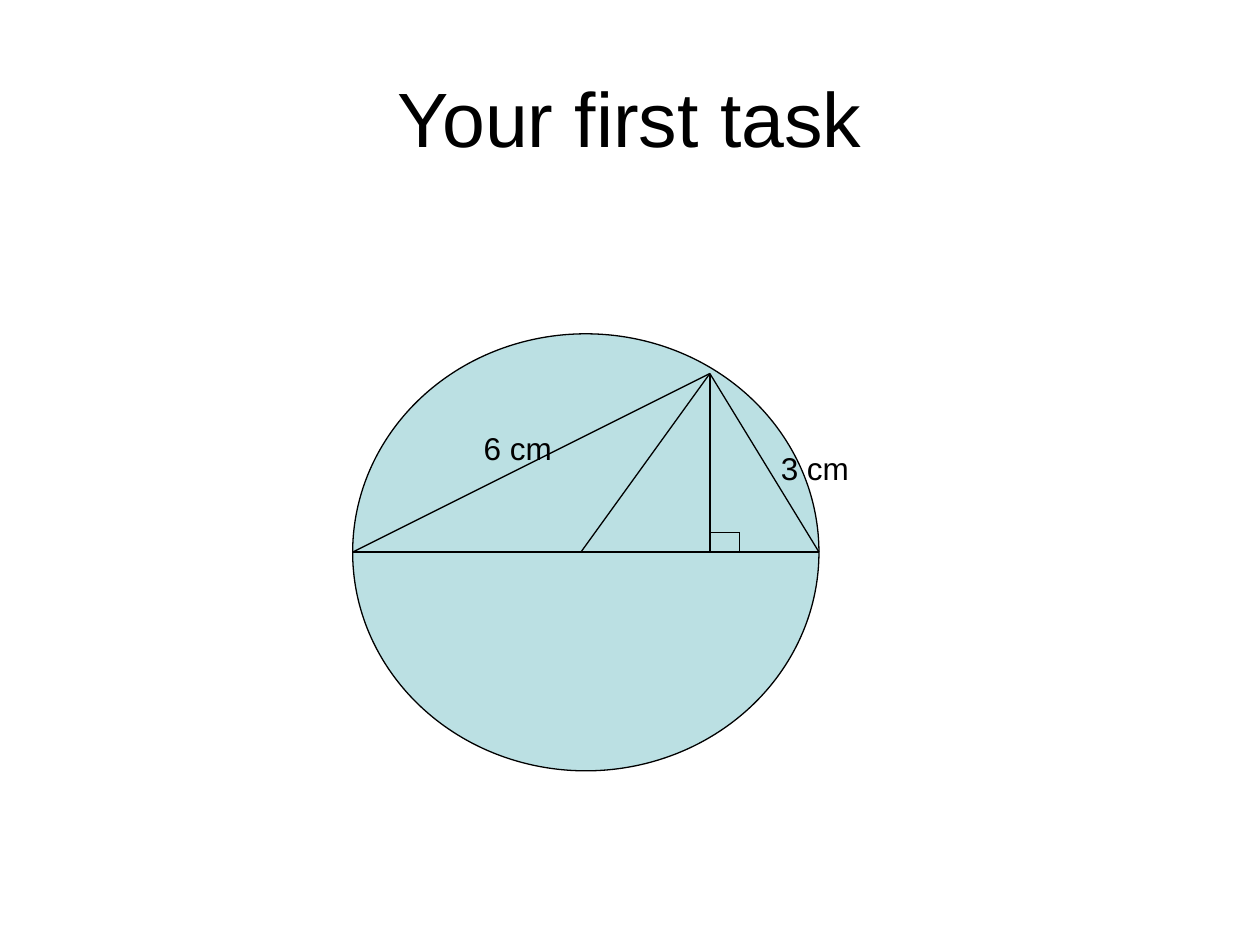
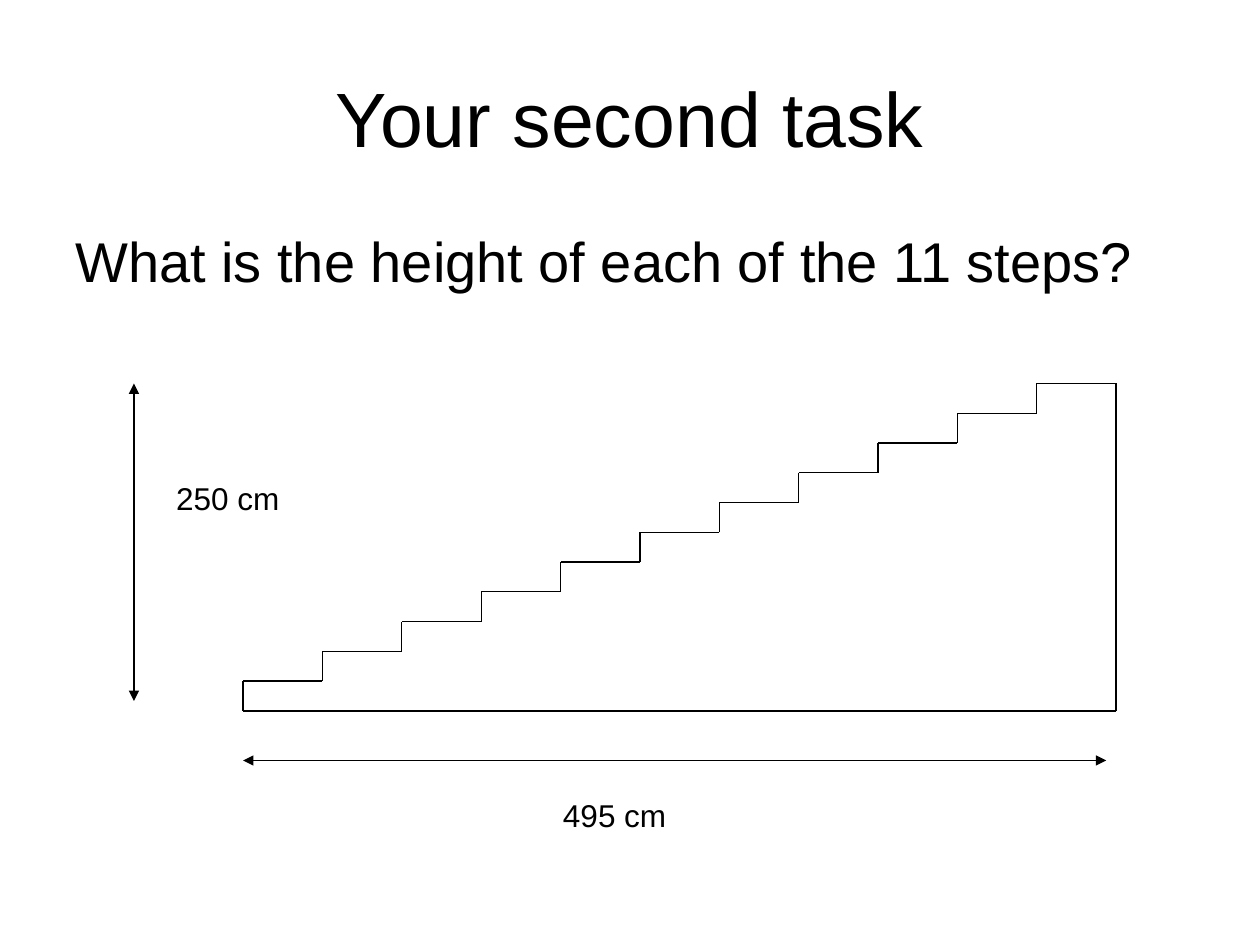
from dataclasses import dataclass
from itertools import pairwise
from typing import NamedTuple

from lxml.etree import SubElement
from pptx import Presentation
from pptx.dml.color import RGBColor
from pptx.enum.shapes import MSO_CONNECTOR, MSO_SHAPE
from pptx.enum.text import MSO_ANCHOR, PP_ALIGN
from pptx.oxml.ns import qn
from pptx.slide import Slide
from pptx.text.text import TextFrame
from pptx.util import Cm, Pt


@dataclass(frozen=True)
class Theme:
    font: str = "Arial"
    ink: RGBColor = RGBColor(0x00, 0x00, 0x00)
    circle: RGBColor = RGBColor(0xBB, 0xE0, 0xE3)
    title_size: int = 44
    question_size: int = 32
    label_size: int = 18
    line_width: float = 0.75


THEME = Theme()
TITLE_ONLY_LAYOUT = 5


class Point(NamedTuple):
    """A place on the slide, in centimetres."""
    x: float
    y: float


@dataclass(frozen=True)
class TextItem:
    """A text box, in centimetres."""
    text: str
    left: float
    top: float
    width: float
    height: float = 1.02
    size: int = THEME.label_size
    space_before: float = 0


# Shared drawing functions
def format_text(text_frame: TextFrame, size: int) -> None:
    for paragraph in text_frame.paragraphs:
        for run in paragraph.runs:
            run.font.name = THEME.font
            run.font.size = Pt(size)
            run.font.color.rgb = THEME.ink


def add_titled_slide(presentation, title: str) -> Slide:
    slide = presentation.slides.add_slide(presentation.slide_layouts[TITLE_ONLY_LAYOUT])
    shape = slide.shapes.title
    shape.left, shape.top, shape.width, shape.height = Cm(1.27), Cm(0.76), Cm(22.86), Cm(3.18)
    text_frame = shape.text_frame
    text_frame.text = title
    text_frame.vertical_anchor = MSO_ANCHOR.MIDDLE
    text_frame.paragraphs[0].alignment = PP_ALIGN.CENTER
    format_text(text_frame, THEME.title_size)
    return slide


def add_text(slide: Slide, item: TextItem) -> None:
    shape = slide.shapes.add_textbox(
        Cm(item.left), Cm(item.top), Cm(item.width), Cm(item.height))
    text_frame = shape.text_frame
    text_frame.word_wrap = True
    text_frame.text = item.text
    text_frame.paragraphs[0].space_before = Pt(item.space_before)
    format_text(text_frame, item.size)


def add_line(slide: Slide, start: Point, end: Point, arrows: bool = False) -> None:
    connector = slide.shapes.add_connector(
        MSO_CONNECTOR.STRAIGHT, Cm(start.x), Cm(start.y), Cm(end.x), Cm(end.y))
    connector.line.color.rgb = THEME.ink
    connector.line.width = Pt(THEME.line_width)
    properties = connector._element.spPr
    if arrows:
        outline = properties.find(qn("a:ln"))
        for tag in ("a:headEnd", "a:tailEnd"):
            SubElement(outline, qn(tag), type="triangle")
    SubElement(properties, qn("a:effectLst"))


def add_path(slide: Slide, points: list[Point]) -> None:
    for start, end in pairwise(points):
        add_line(slide, start, end)


# First task: triangle in a circle
def build_circle_slide(presentation) -> None:
    slide = add_titled_slide(presentation, "Your first task")

    left, top, width, height = 7.11, 6.73, 9.4, 8.81
    circle = slide.shapes.add_shape(
        MSO_SHAPE.OVAL, Cm(left), Cm(top), Cm(width), Cm(height))
    circle.shadow.inherit = False
    circle.fill.solid()
    circle.fill.fore_color.rgb = THEME.circle
    circle.line.color.rgb = THEME.ink
    circle.line.width = Pt(THEME.line_width)

    diameter_y = 11.13
    diameter_left = Point(left, diameter_y)
    diameter_right = Point(left + width, diameter_y)
    center = Point(11.71, diameter_y)
    apex = Point(14.31, 7.53)
    foot = Point(apex.x, diameter_y)
    add_path(slide, [apex, diameter_left, diameter_right, apex])
    add_line(slide, center, apex)
    add_line(slide, apex, foot)

    # Right-angle mark
    mark_width, mark_height = 0.6, 0.4
    add_path(slide, [
        Point(foot.x, foot.y - mark_height),
        Point(foot.x + mark_width, foot.y - mark_height),
        Point(foot.x + mark_width, foot.y),
    ])

    add_text(slide, TextItem("6 cm", 9.5, 8.53, 2.2))
    add_text(slide, TextItem("3 cm", 15.49, 8.93, 2.2))


# Second task: staircase with its dimensions
def build_stairs_slide(presentation) -> None:
    slide = add_titled_slide(presentation, "Your second task")
    add_text(slide, TextItem("What is the height of each of the 11 steps?",
                             1.27, 4.45, 22.86, 1.8, THEME.question_size, 3.5))

    step_count, step_width, step_height = 11, 1.6, 0.6
    base = Point(4.9, 14.33)
    stairs = [base]
    for step in range(step_count):
        tread_y = base.y - (step + 1) * step_height
        stairs.append(Point(base.x + step * step_width, tread_y))
        stairs.append(Point(base.x + (step + 1) * step_width, tread_y))
    landing = stairs[-1]
    add_path(slide, stairs + [Point(landing.x, base.y), base])

    # Dimension arrows and labels
    add_line(slide, Point(2.7, landing.y), Point(2.7, 14.13), arrows=True)
    add_line(slide, Point(base.x, 15.33), Point(22.3, 15.33), arrows=True)
    add_text(slide, TextItem("495 cm", 11.1, 15.93, 2.8))
    add_text(slide, TextItem("250 cm", 3.3, 9.53, 2.8))


def main() -> None:
    presentation = Presentation()
    presentation.slide_width, presentation.slide_height = Cm(25.4), Cm(19.05)
    build_circle_slide(presentation)
    build_stairs_slide(presentation)
    presentation.save("out.pptx")


if __name__ == "__main__":
    main()
